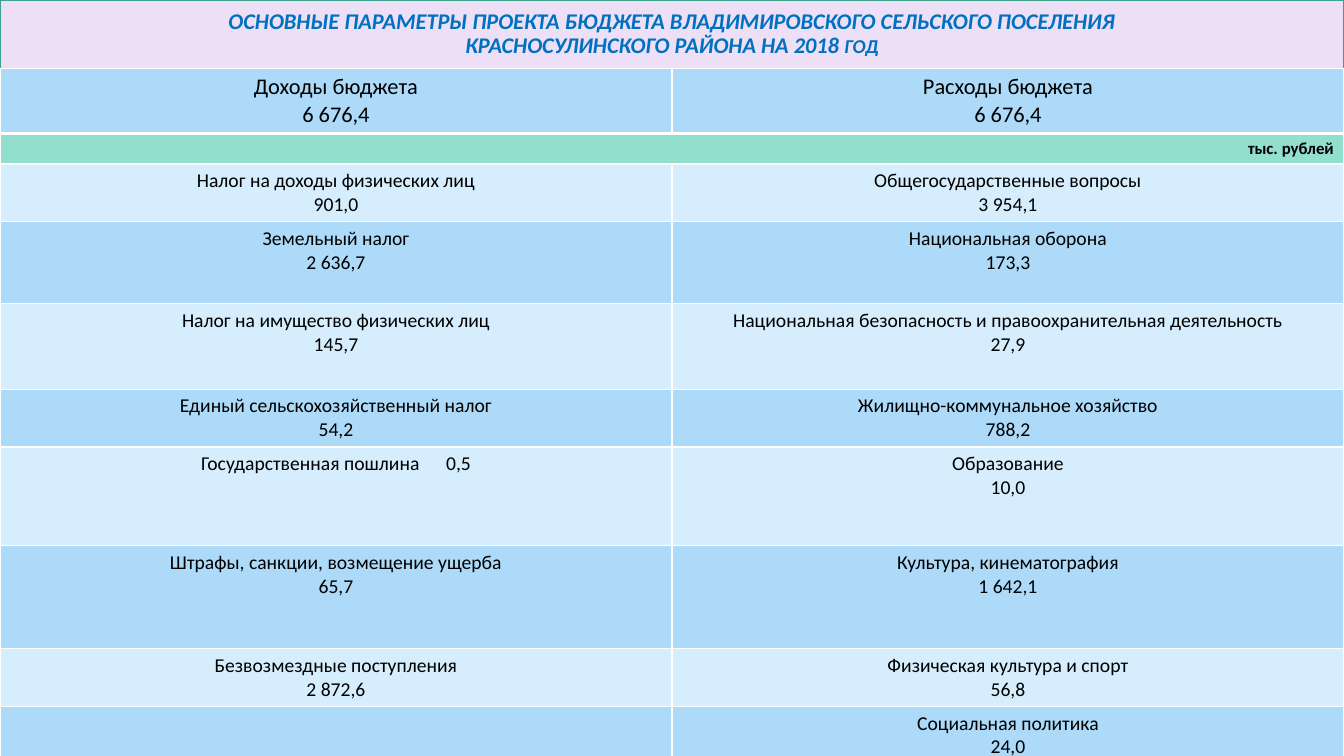
from lxml import etree
from pptx import Presentation
from pptx.dml.color import RGBColor
from pptx.enum import text as t
from pptx.oxml import ns
from pptx.util import Inches, Pt

WHITE = RGBColor(0xFF, 0xFF, 0xFF)
GREY = RGBColor(0xB9, 0xB9, 0xB9)
BLACK = RGBColor(0, 0, 0)
TITLE_BLUE = RGBColor(0x00, 0x70, 0xC0)
LILAC = RGBColor(0xED, 0xDF, 0xF6)
TEAL = RGBColor(0x3C, 0xA2, 0x8B)
GREEN = RGBColor(0x93, 0xDF, 0xCE)
LIGHT_BLUE = RGBColor(0xD5, 0xED, 0xFC)
SKY_BLUE = RGBColor(0xAC, 0xDA, 0xF8)

TITLE_LINES = (
    "ОСНОВНЫЕ ПАРАМЕТРЫ ПРОЕКТА БЮДЖЕТА ВЛАДИМИРОВСКОГО СЕЛЬСКОГО ПОСЕЛЕНИЯ",
    "КРАСНОСУЛИНСКОГО РАЙОНА НА 2018 ",
)
TITLE_END = "ГОД"
BUDGET = [
    (0.63, ["Доходы бюджета", "6 676,4"], ["Расходы бюджета", "6 676,4"]),
    (0.3, ["тыс. рублей"], []),
    (0.56, ["Налог на доходы физических лиц", "901,0"], ["Общегосударственные вопросы", "3 954,1"]),
    (0.81, ["Земельный налог", "2 636,7"], ["Национальная оборона", "173,3"]),
    (0.85, ["Налог на имущество физических лиц", "145,7"],
     ["Национальная безопасность и правоохранительная деятельность", "27,9"]),
    (0.57, ["Единый сельскохозяйственный налог", "54,2"], ["Жилищно-коммунальное хозяйство", "788,2"]),
    (0.98, ["Государственная пошлина\t0,5"], ["Образование", "10,0"]),
    (1.02, ["Штрафы, санкции, возмещение ущерба", "65,7"], ["Культура, кинематография", "1 642,1"]),
    (0.56, ["Безвозмездные поступления", "2 872,6"], ["Физическая культура и спорт", "56,8"]),
    (0.56, [], ["Социальная политика", "24,0"]),
]
HEADER_ROW, UNIT_ROW = 0, 1
WIDTH, HEIGHT, TITLE_HEIGHT = 13.33, 7.5, 0.68
TAB_STOP = 2.43

TITLE_FONT = {"name": "Calibri", "size": Pt(16), "bold": True, "italic": True}
HEADER_FONT = {"name": "Calibri", "size": Pt(16), "bold": False}
UNIT_FONT = {"name": "Calibri", "size": Pt(12), "bold": True}
ITEM_FONT = {"name": "Calibri", "size": Pt(14), "bold": False}


def format_font(font, values, color):
    for name, value in values.items():
        setattr(font, name, value)
    font.color.rgb = color


def add_borders(cell, bottom):
    properties = cell._tc.get_or_add_tcPr()
    for side, width in (("L", 1), ("R", 1), ("T", 1), ("B", bottom)):
        line = etree.SubElement(properties, ns.qn(f"a:ln{side}"), w=str(Pt(width)))
        fill = etree.SubElement(line, ns.qn("a:solidFill"))
        etree.SubElement(fill, ns.qn("a:srgbClr"), val=str(WHITE))


def add_tab_stop(para):
    tabs = etree.SubElement(para._p.get_or_add_pPr(), ns.qn("a:tabLst"))
    etree.SubElement(tabs, ns.qn("a:tab"), pos=str(Inches(TAB_STOP)), algn="l")


def write_cell(cell, lines, values, align):
    frame = cell.text_frame
    for index, line in enumerate(lines):
        para = frame.add_paragraph() if index else frame.paragraphs[0]
        para.alignment = align
        if "\t" in line:
            add_tab_stop(para)
        span = para.add_run()
        span.text = line
        format_font(span.font, values, BLACK)


def add_title(page):
    box = page.shapes.title
    box.left, box.top, box.width, box.height = 0, 0, Inches(WIDTH), Inches(TITLE_HEIGHT)
    box.fill.solid()
    box.fill.fore_color.rgb = LILAC
    box.line.color.rgb = TEAL
    box.line.width = Pt(0.75)
    frame = box.text_frame
    frame.word_wrap = True
    frame.auto_size = t.MSO_AUTO_SIZE.NONE
    frame.vertical_anchor = t.MSO_ANCHOR.MIDDLE
    para = frame.paragraphs[0]
    para.alignment = t.PP_ALIGN.CENTER
    para.line_spacing = 0.9
    for index, line in enumerate(TITLE_LINES):
        if index:
            para.add_line_break()
        span = para.add_run()
        span.text = line
        format_font(span.font, TITLE_FONT, TITLE_BLUE)
    span = para.add_run()
    span.text = TITLE_END
    format_font(span.font, {**TITLE_FONT, "size": Pt(14)}, TITLE_BLUE)


def add_budget(page):
    total = sum(row[0] for row in BUDGET)
    table = page.shapes.add_table(
        len(BUDGET), 2, 0, Inches(TITLE_HEIGHT), Inches(WIDTH), Inches(total)).table
    table.first_row = table.horz_banding = False
    for row, (height, *texts) in enumerate(BUDGET):
        table.rows[row].height = Inches(height)
        values, align = ITEM_FONT, t.PP_ALIGN.CENTER
        color = SKY_BLUE if row % 2 else LIGHT_BLUE
        if row == HEADER_ROW:
            values, color = HEADER_FONT, SKY_BLUE
        elif row == UNIT_ROW:
            values, color, align = UNIT_FONT, GREEN, t.PP_ALIGN.RIGHT
        for column, lines in enumerate(texts):
            cell = table.cell(row, column)
            add_borders(cell, 3 if row == HEADER_ROW else 1)
            cell.fill.solid()
            cell.fill.fore_color.rgb = color
            write_cell(cell, lines, values, align)
    table.cell(UNIT_ROW, 0).merge(table.cell(UNIT_ROW, 1))


def main():
    deck = Presentation()
    deck.slide_width, deck.slide_height = Inches(WIDTH), Inches(HEIGHT)
    page = deck.slides.add_slide(deck.slide_layouts[5])
    backdrop = page.background.fill
    backdrop.gradient()
    backdrop.gradient_angle = 270
    for stop, color in zip(backdrop.gradient_stops, (WHITE, GREY)):
        stop.color.rgb = color
    add_title(page)
    add_budget(page)
    deck.save("out.pptx")


if __name__ == "__main__":
    main()
